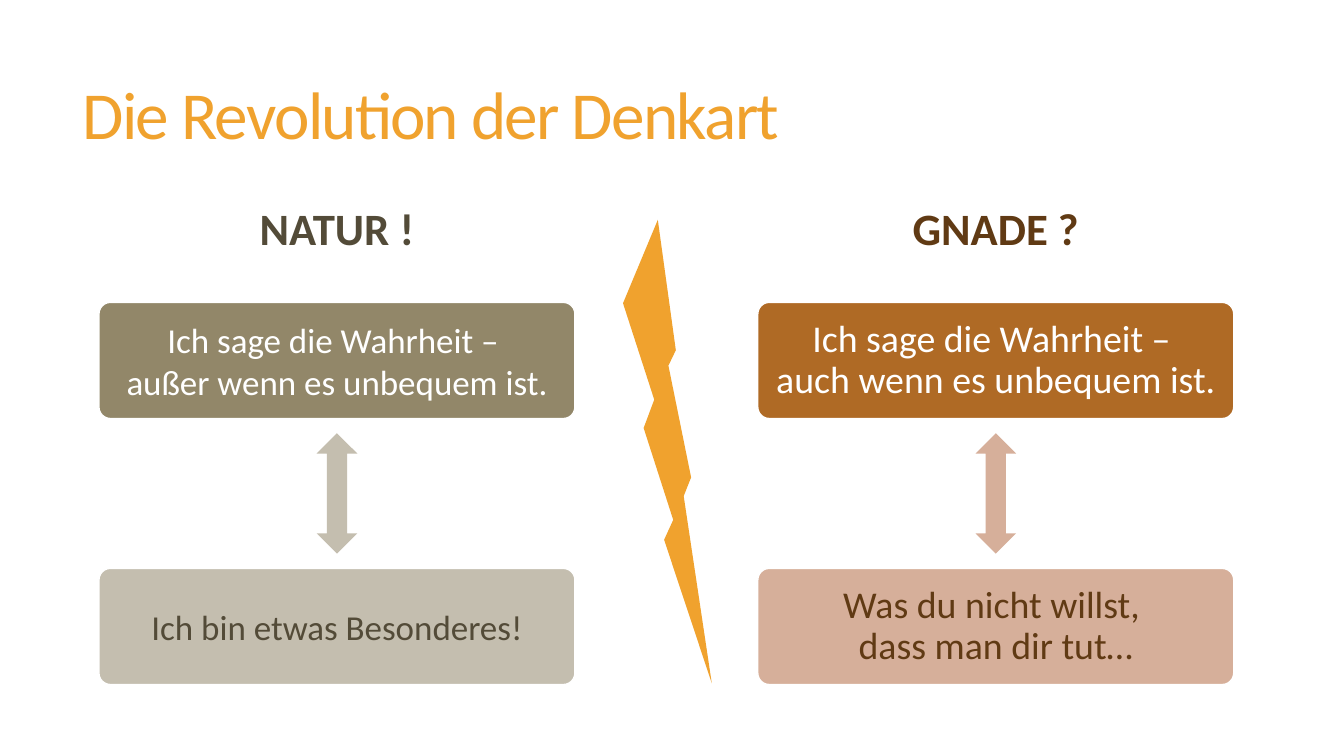
from pptx import Presentation
from pptx.dml.color import RGBColor
from pptx.enum.shapes import MSO_SHAPE
from pptx.enum.text import MSO_ANCHOR, MSO_AUTO_SIZE, PP_ALIGN
from pptx.util import Pt

ROUNDED = MSO_SHAPE.ROUNDED_RECTANGLE
DOUBLE_ARROW = MSO_SHAPE.UP_DOWN_ARROW
BOLT = MSO_SHAPE.LIGHTNING_BOLT
MIDDLE = MSO_ANCHOR.MIDDLE
TOP = MSO_ANCHOR.TOP
NO_AUTOFIT = MSO_AUTO_SIZE.NONE
LEFT = PP_ALIGN.LEFT
CENTER = PP_ALIGN.CENTER

WHITE = RGBColor(0xFF, 0xFF, 0xFF)
ORANGE = RGBColor(0xF0, 0xA2, 0x2E)
OLIVE = RGBColor(0x92, 0x87, 0x69)
LIGHT_OLIVE = RGBColor(0xC4, 0xBE, 0xAF)
DARK_OLIVE = RGBColor(0x53, 0x4B, 0x38)
BROWN = RGBColor(0xAF, 0x6A, 0x25)
LIGHT_BROWN = RGBColor(0xD6, 0xAF, 0x9A)
DARK_BROWN = RGBColor(0x60, 0x3A, 0x14)

CARD_WIDTH, CARD_HEIGHT = 340, 83
CARD_TOPS = (216, 406)
ARROW_WIDTH, ARROW_HEIGHT = 29, 86
HEADING_WIDTH = 377


class SlideBuilder:
    font_name = "Calibri"

    def __init__(self, presentation):
        self.slide = presentation.slides.add_slide(presentation.slide_layouts[5])

    def set_text(self, shape, text, size, color, align=CENTER, anchor=MIDDLE,
                 bold=False, spacing=1.0, inset=7.2):
        frame = shape.text_frame
        frame.word_wrap = True
        frame.auto_size = NO_AUTOFIT
        frame.vertical_anchor = anchor
        frame.margin_left = frame.margin_right = Pt(inset)
        paragraph = frame.paragraphs[0]
        paragraph.text = text
        paragraph.alignment = align
        paragraph.line_spacing = spacing
        for run in paragraph.runs:
            run.font.name = self.font_name
            run.font.size = Pt(size)
            run.font.bold = bold
            run.font.color.rgb = color

    def title(self, text):
        title = self.slide.shapes.title
        title.left, title.top = Pt(51.8), Pt(39.6)
        title.width, title.height = Pt(848), Pt(81.4)
        self.set_text(title, text, 48, ORANGE, align=LEFT)
        for run in title.text_frame.paragraphs[0].runs:
            run.font._element.set("spc", "-120")

    def heading(self, center, text, color):
        box = self.slide.shapes.add_textbox(
            Pt(center - HEADING_WIDTH / 2), Pt(139.7), Pt(HEADING_WIDTH), Pt(50))
        self.set_text(box, text, 32, color, anchor=TOP, bold=True)

    def shape(self, kind, left, top, width, height, fill, adjustments=()):
        shape = self.slide.shapes.add_shape(
            kind, Pt(left), Pt(top), Pt(width), Pt(height))
        shape.shadow.inherit = False
        shape.fill.solid()
        shape.fill.fore_color.rgb = fill
        shape.line.fill.background()
        for index, value in enumerate(adjustments):
            shape.adjustments[index] = value
        return shape

    def card(self, center, top, text, fill, color, size, spacing, inset):
        card = self.shape(ROUNDED, center - CARD_WIDTH / 2, top,
                          CARD_WIDTH, CARD_HEIGHT, fill, (0.1,))
        card.line.color.rgb = WHITE
        card.line.width = Pt(1)
        self.set_text(card, text, size, color, spacing=spacing, inset=inset)

    def column(self, center, heading, texts, fills, dark, size, spacing, inset):
        self.heading(center, heading, dark)
        for top, text, fill, color in zip(CARD_TOPS, texts, fills, (WHITE, dark)):
            self.card(center, top, text, fill, color, size, spacing, inset)
        middle = (CARD_TOPS[0] + CARD_TOPS[1] + CARD_HEIGHT) / 2
        self.shape(DOUBLE_ARROW, center - ARROW_WIDTH / 2, middle - ARROW_HEIGHT / 2,
                   ARROW_WIDTH, ARROW_HEIGHT, fills[1], (0.6, 0.5))


def main():
    presentation = Presentation()
    presentation.slide_width, presentation.slide_height = Pt(960), Pt(540)
    builder = SlideBuilder(presentation)
    builder.title("Die Revolution der Denkart")
    builder.column(
        240.7, "NATUR !",
        ("Ich sage die Wahrheit – \naußer wenn es unbequem ist.",
         "Ich bin etwas Besonderes!"),
        (OLIVE, LIGHT_OLIVE), DARK_OLIVE, 25, 1.0, 7.2)
    builder.column(
        711.3, "GNADE ?",
        ("Ich sage die Wahrheit – \nauch wenn es unbequem ist.",
         "Was du nicht willst, \ndass man dir tut…"),
        (BROWN, LIGHT_BROWN), DARK_BROWN, 27, 0.9, 8)
    builder.shape(BOLT, 445, 157, 63.4, 331, ORANGE)
    presentation.save("out.pptx")


if __name__ == "__main__":
    main()
